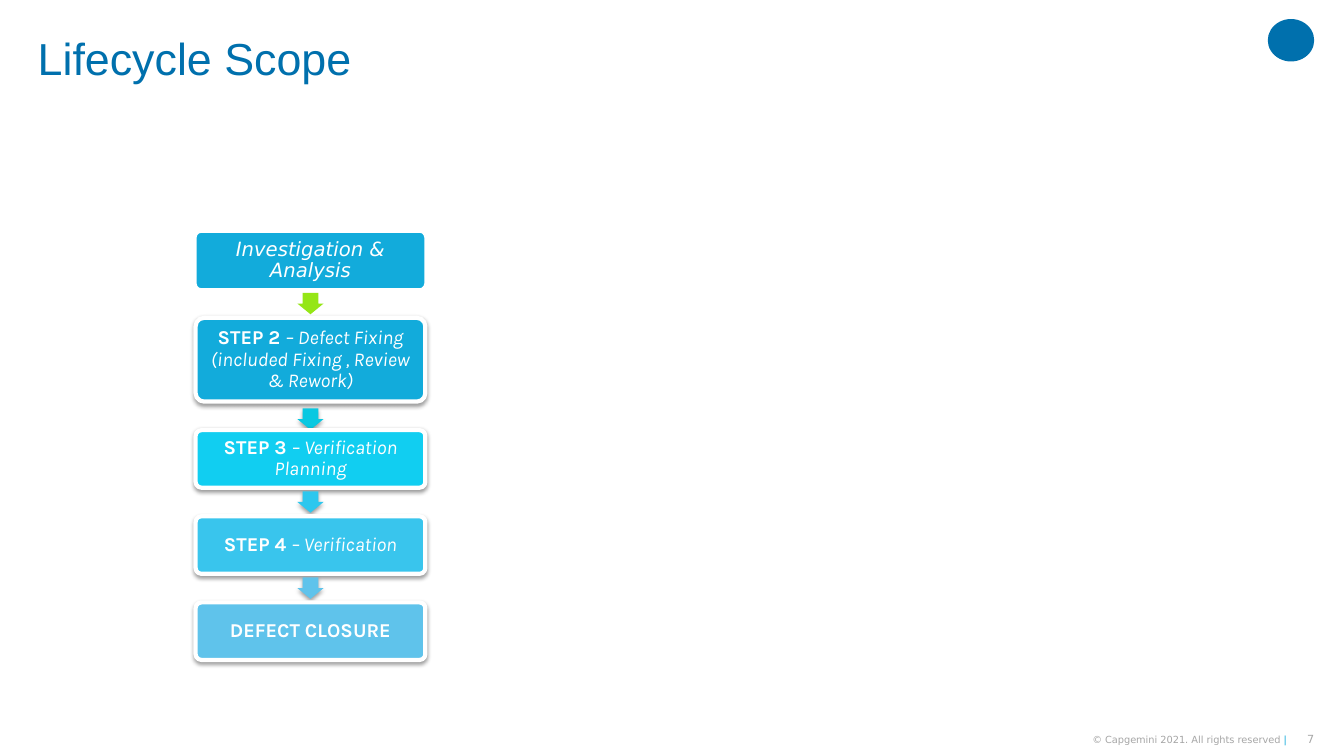
from lxml import etree
from pptx import Presentation
from pptx.dml.color import RGBColor
from pptx.enum.shapes import MSO_SHAPE as Shape
from pptx.enum.text import MSO_ANCHOR as Anchor, PP_ALIGN as Align
from pptx.oxml.ns import qn
from pptx.util import Cm, Pt

COLORS = {
    "title": "0070AD", "accent": "12ABDB", "white": "FFFFFF", "grey": "A6A6A6",
    "lime": "95E616", "teal": "09C8E1", "cyan": "11CEF1", "aqua": "2CC7EE",
    "sky": "39C5ED", "pale": "5FC3EB", "black": "000000",
}
TITLE = "Lifecycle Scope"
FOOTER = [("© Capgemini 2021. All rights reserved ", "grey"), ("|", "accent")]
PAGE = "7"

# bold part, italic part, fill, height, font, outline, shadow
STEPS = [
    ("", "Investigation & Analysis", "accent", 1.45, "DejaVu Sans", 1.5, False),
    ("STEP 2 ", "– Defect Fixing (included Fixing , Review & Rework)",
     "accent", 2.11, "Karla", 3, True),
    ("STEP 3 ", "– Verification Planning", "cyan", 1.45, "Karla", 3, True),
    ("STEP 4 ", "– Verification", "sky", 1.45, "Karla", 3, True),
    ("DEFECT CLOSURE", "", "pale", 1.45, "Karla", 3, True),
]
# fill, shift below the middle of the gap, shadow
ARROWS = [("lime", 0, False), ("teal", 0.08, True), ("aqua", 0, True), ("pale", 0, True)]

BOX_LEFT, BOX_TOP, BOX_W, GAP = 4.93, 5.84, 5.79, 0.72
ARROW_W, ARROW_H = 0.66, 0.54


def rgb(name):
    return RGBColor.from_string(COLORS[name])


def add_shape(s, kind, x, y, w, h, fill, shadow=False):
    sp = s.shapes.add_shape(kind, Cm(x), Cm(y), Cm(w), Cm(h))
    sp.fill.solid()
    sp.fill.fore_color.rgb = rgb(fill)
    sp.line.fill.background()
    sp.shadow.inherit = False
    if shadow:
        effects = sp._element.spPr.find(qn("a:effectLst"))
        outer = etree.SubElement(
            effects, qn("a:outerShdw"), blurRad=str(Pt(3.1)), dist=str(Pt(1.6)),
            dir="5400000", algn="ctr", rotWithShape="0")
        color = etree.SubElement(outer, qn("a:srgbClr"), val=COLORS["black"])
        etree.SubElement(color, qn("a:alpha"), val="38000")
    return sp


def set_frame(tf, inset=0, wrap=True):
    tf.word_wrap = wrap
    tf.vertical_anchor = Anchor.MIDDLE
    tf.margin_left = tf.margin_right = tf.margin_top = tf.margin_bottom = Cm(inset)


def add_text(s, x, y, w, h, runs, font, size, align=Align.LEFT, wrap=True):
    tf = s.shapes.add_textbox(Cm(x), Cm(y), Cm(w), Cm(h)).text_frame
    set_frame(tf, wrap=wrap)
    p = tf.paragraphs[0]
    p.alignment = align
    p.font.name, p.font.size = font, Pt(size)
    for text, color in runs:
        r = p.add_run()
        r.text = text
        r.font.color.rgb = rgb(color)
    return p


def add_step(s, y, bold, italic, fill, height, font, outline, shadow):
    sp = add_shape(s, Shape.ROUNDED_RECTANGLE, BOX_LEFT, y, BOX_W, height, fill, shadow)
    sp.adjustments[0] = 0.1
    sp.line.color.rgb = rgb("white")
    sp.line.width = Pt(outline)
    tf = sp.text_frame
    set_frame(tf, inset=0.15)
    p = tf.paragraphs[0]
    p.alignment, p.line_spacing = Align.CENTER, 0.9
    p.font.name, p.font.size = font, Pt(14)
    p.font.color.rgb = rgb("white")
    for text, is_bold in ((bold, True), (italic, False)):
        if text:
            r = p.add_run()
            r.text = text
            r.font.bold, r.font.italic = is_bold, not is_bold


def main():
    prs = Presentation()
    prs.slide_width, prs.slide_height = Cm(33.87), Cm(19.05)
    s = prs.slides.add_slide(prs.slide_layouts[6])

    # Corner mark, footer and page number
    add_shape(s, Shape.OVAL, 31.95, 0.48, 1.17, 1.07, "title")
    add_text(s, 32.64, 18.47, 0.48, 0.33, [(PAGE, "grey")],
             "DejaVu Sans", 8, Align.RIGHT, wrap=False)
    add_text(s, 25.04, 18.47, 7.39, 0.33, FOOTER, "DejaVu Sans", 7, Align.RIGHT)

    # Title
    p = add_text(s, 0.95, 0, 30.6, 3.07, [(TITLE, "title")], "Arial", 32)
    p.line_spacing = 0.9

    # Steps, with an arrow in each gap
    y = BOX_TOP
    for i, step in enumerate(STEPS):
        if i:
            fill, shift, shadow = ARROWS[i - 1]
            arrow = add_shape(s, Shape.DOWN_ARROW, BOX_LEFT + (BOX_W - ARROW_W) / 2,
                              y - (GAP + ARROW_H) / 2 + shift, ARROW_W, ARROW_H,
                              fill, shadow)
            arrow.adjustments[0], arrow.adjustments[1] = 0.6, 0.5
        add_step(s, y, *step)
        y += step[3] + GAP

    prs.save("out.pptx")


if __name__ == "__main__":
    main()
